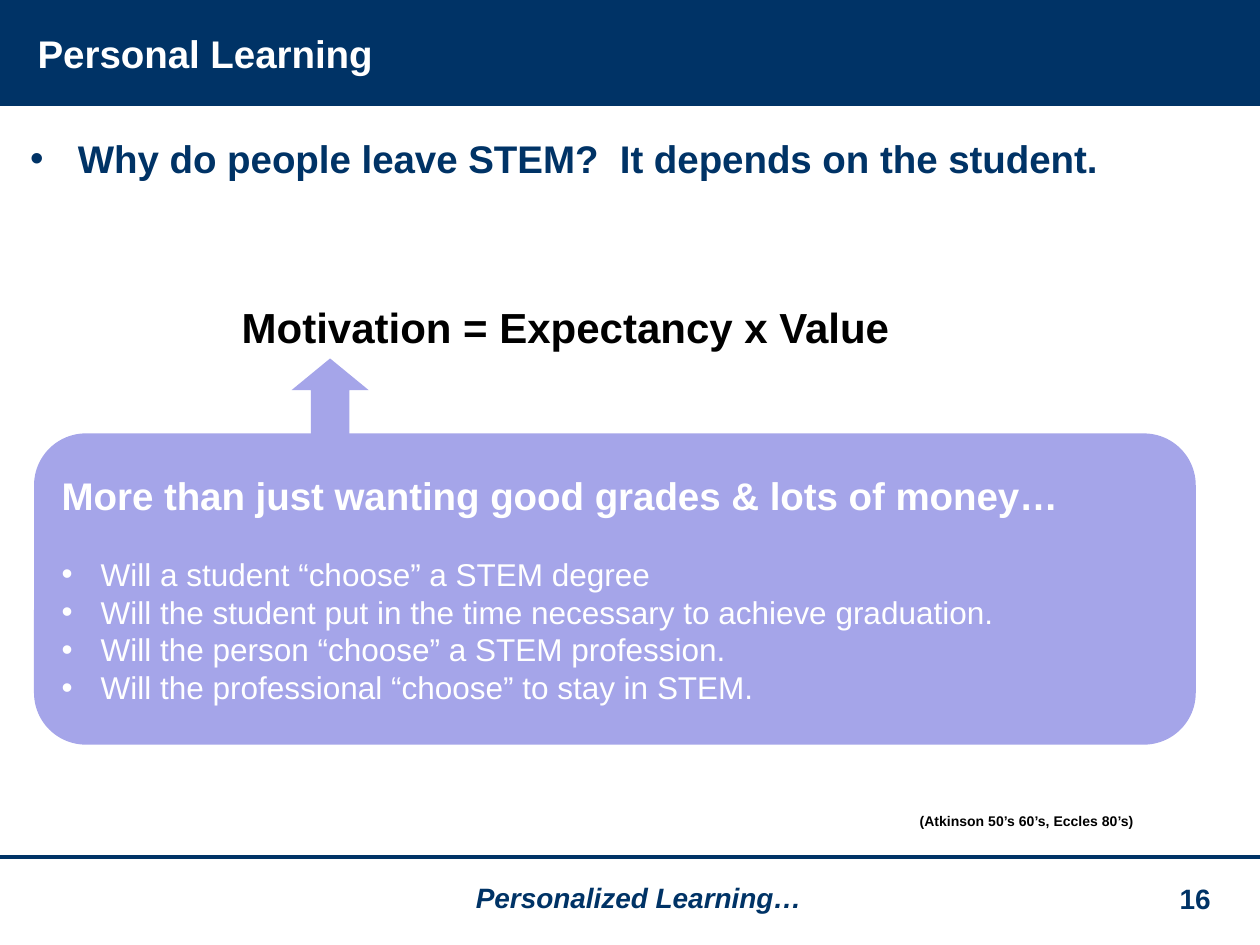
from dataclasses import dataclass

from lxml.etree import SubElement
from pptx import Presentation
from pptx.dml.color import RGBColor
from pptx.enum.shapes import MSO_CONNECTOR, MSO_SHAPE
from pptx.enum.text import MSO_ANCHOR, PP_ALIGN
from pptx.oxml.ns import qn
from pptx.util import Emu, Pt

PIXEL = 9144


@dataclass(frozen=True)
class Theme:
    """Colours, font and type sizes of the slide."""

    navy: str = "003366"
    lilac: str = "A5A5E9"
    white: str = "FFFFFF"
    black: str = "000000"
    font: str = "Arial"
    formula: int = 24
    heading: int = 22
    body: int = 18
    footer: int = 16
    citation: int = 8


class SlideBuilder:
    """Draws styled elements on the current slide."""

    def __init__(self, slide, theme):
        """Keep the slide and its theme."""
        self.slide = slide
        self.theme = theme

    def lengths(self, *pixels):
        """Turn pixel lengths into EMU."""
        return [Emu(pixel * PIXEL) for pixel in pixels]

    def fill_paragraph(self, paragraph, text, size, color, bold=True, italic=False,
                       align=PP_ALIGN.LEFT, indent=0, space_before=0):
        """Fill a paragraph, with a hanging bullet when indented."""
        paragraph.text = text
        paragraph.alignment = align
        paragraph.space_before = Pt(space_before)
        if indent:
            properties = paragraph._p.get_or_add_pPr()
            properties.set("marL", str(indent * PIXEL))
            properties.set("indent", str(-indent * PIXEL))
            SubElement(properties, qn("a:buFont"), typeface=self.theme.font)
            SubElement(properties, qn("a:buChar"), char="•")
        font = paragraph.font
        font.name = self.theme.font
        font.size = Pt(size)
        font.bold = bold
        font.italic = italic
        font.color.rgb = RGBColor.from_string(color)

    def text(self, box, text, size, color, anchor=MSO_ANCHOR.TOP, **style):
        """Add a wrapped text box with one paragraph."""
        frame = self.slide.shapes.add_textbox(*self.lengths(*box)).text_frame
        frame.word_wrap = True
        frame.vertical_anchor = anchor
        self.fill_paragraph(frame.paragraphs[0], text, size, color, **style)

    def shape(self, kind, box, fill):
        """Add a filled preset shape without outline."""
        shape = self.slide.shapes.add_shape(kind, *self.lengths(*box))
        shape.shadow.inherit = False
        shape.fill.solid()
        shape.fill.fore_color.rgb = RGBColor.from_string(fill)
        shape.line.fill.background()
        return shape

    def line(self, ends, color, width):
        """Add a straight line."""
        line = self.slide.shapes.add_connector(MSO_CONNECTOR.STRAIGHT, *self.lengths(*ends))
        line.line.color.rgb = RGBColor.from_string(color)
        line.line.width = Pt(width)
        SubElement(line._element.spPr, qn("a:effectLst"))

    def panel(self, box, heading, bullets):
        """Add a rounded panel with a heading and bullets."""
        theme = self.theme
        frame = self.shape(MSO_SHAPE.ROUNDED_RECTANGLE, box, theme.lilac).text_frame
        frame.word_wrap = True
        frame.vertical_anchor = MSO_ANCHOR.MIDDLE
        self.fill_paragraph(frame.paragraphs[0], heading, theme.heading, theme.white)
        for index, bullet in enumerate(bullets):
            self.fill_paragraph(frame.add_paragraph(), bullet, theme.body, theme.white,
                                bold=False, indent=31, space_before=0 if index else 21)

    def up_arrow(self, box):
        """Add a block arrow turned to point up."""
        arrow = self.shape(MSO_SHAPE.RIGHT_ARROW, box, self.theme.lilac)
        arrow.adjustments[0] = 0.5
        arrow.adjustments[1] = 0.41
        arrow.rotation = 270


def main():
    """Build the motivation slide and save it."""
    presentation = Presentation()
    presentation.slide_width = Emu(1000 * PIXEL)
    presentation.slide_height = Emu(750 * PIXEL)
    theme = Theme()
    builder = SlideBuilder(presentation.slides.add_slide(presentation.slide_layouts[6]), theme)

    builder.shape(MSO_SHAPE.RECTANGLE, (0, 0, 1000, 84), theme.navy)
    builder.line((0, 680, 1000, 680), theme.navy, 2)
    builder.text((240, 694, 534, 37), "Personalized Learning…", theme.footer, theme.navy,
                 italic=True, align=PP_ALIGN.CENTER)
    builder.text((913, 695, 71, 37), "16", theme.footer, theme.navy, align=PP_ALIGN.CENTER)
    builder.text((20, 21, 601, 42), "Personal Learning", theme.heading, theme.white,
                 anchor=MSO_ANCHOR.MIDDLE)
    builder.text((14, 102, 972, 562), "Why do people leave STEM?  It depends on the student.",
                 theme.heading, theme.navy, indent=38)
    builder.text((182, 234, 723, 50), "Motivation = Expectancy x Value",
                 theme.formula, theme.black)
    builder.panel((27, 344, 922, 247), "More than just wanting good grades & lots of money…", (
        "Will a student “choose” a STEM degree",
        "Will the student put in the time necessary to achieve graduation.",
        "Will the person “choose” a STEM profession.",
        "Will the professional “choose” to stay in STEM.",
    ))
    builder.up_arrow((221, 295, 82, 61))
    builder.text((720, 640, 265, 24), "(Atkinson 50’s 60’s, Eccles 80’s)",
                 theme.citation, theme.black)

    presentation.save("out.pptx")


if __name__ == "__main__":
    main()
